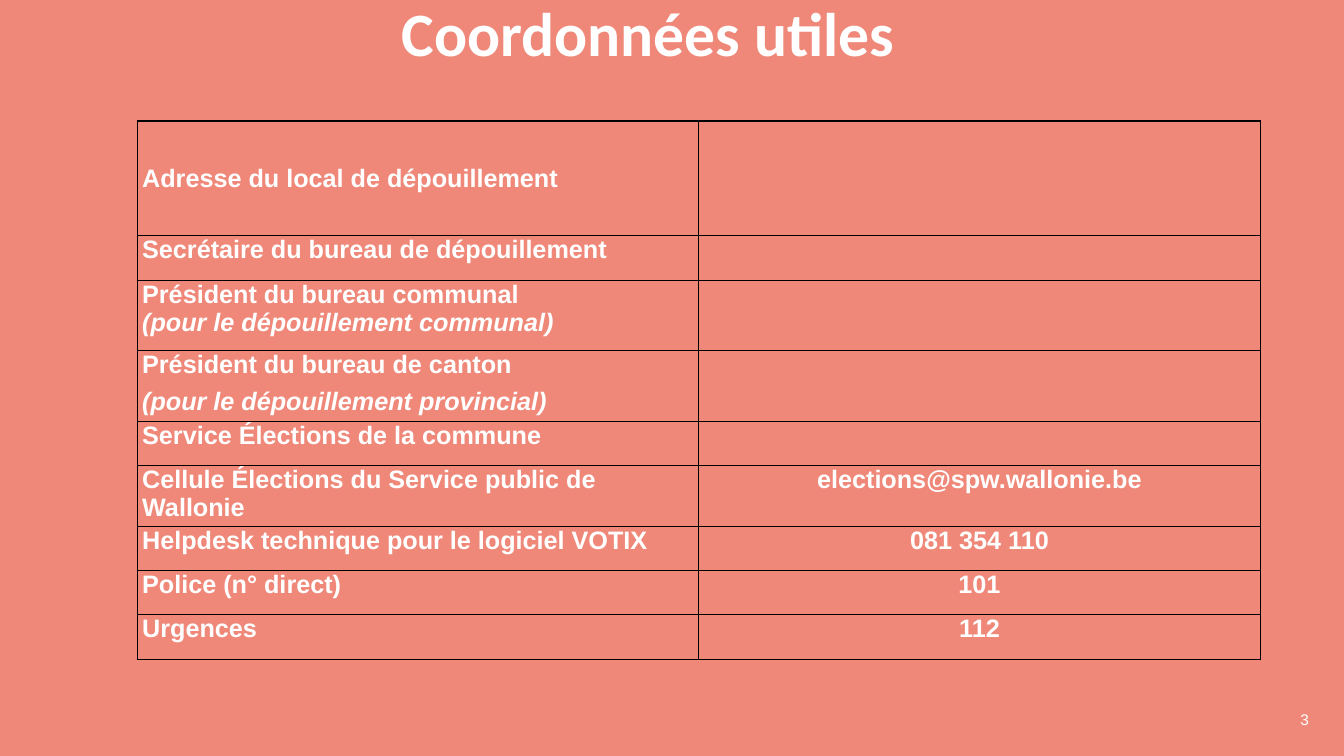
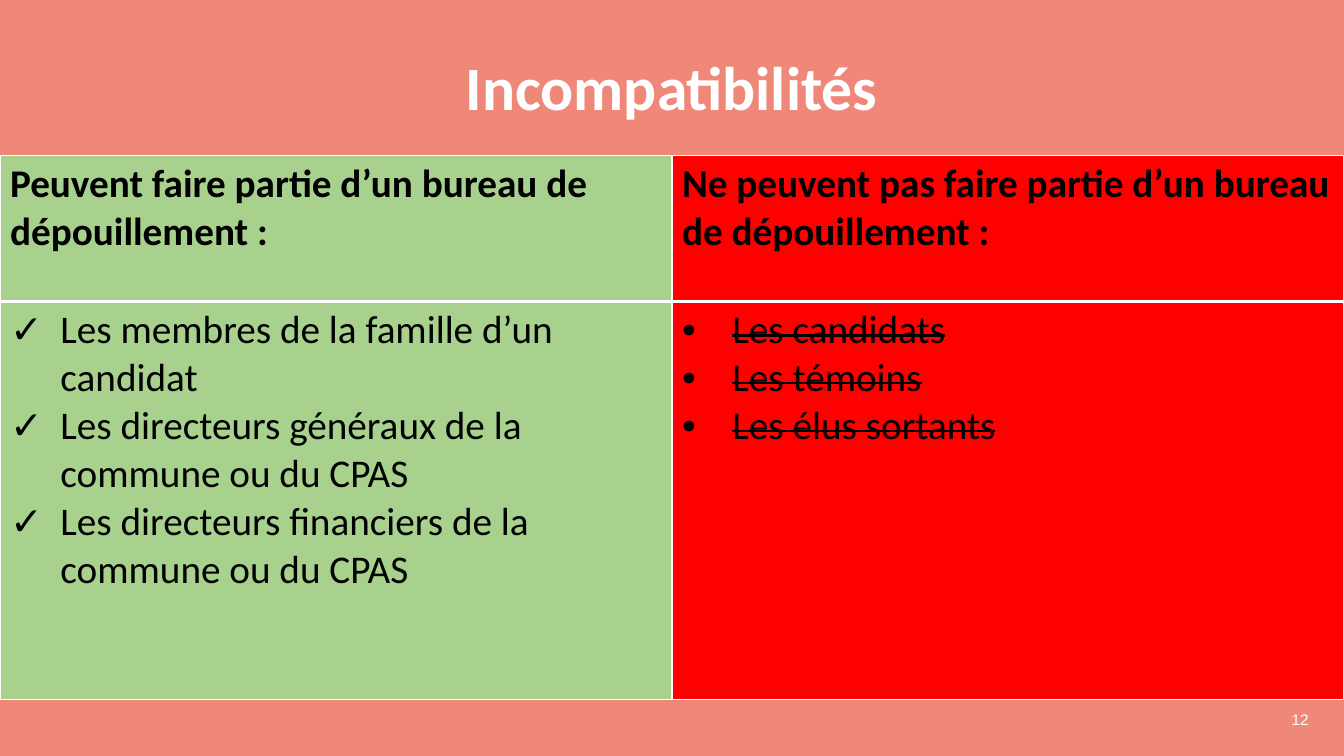
import pptx
import pptx.util
import pptx.dml.color
import pptx.enum.text
import pptx.oxml
import pptx.oxml.ns
from lxml import etree

Inches, Pt = pptx.util.Inches, pptx.util.Pt
ALIGN, ANCHOR = pptx.enum.text.PP_ALIGN, pptx.enum.text.MSO_ANCHOR
CORAL, WHITE, BLACK, GREEN, RED = "EF8879", "FFFFFF", "000000", "A9D18E", "FF0000"
WIDTH = 13.33


def style(paragraph, name, size, colour, bold=False, align=ALIGN.LEFT):
    paragraph.alignment = align
    font = paragraph.font
    font.name, font.size, font.bold = name, Pt(size), bold
    font.color.rgb = pptx.dml.color.RGBColor.from_string(colour)


def set_borders(cell, colour, top=1, bottom=1):
    properties = cell._tc.get_or_add_tcPr()
    for side, points in (("L", 1), ("R", 1), ("T", top), ("B", bottom)):
        line = etree.SubElement(properties, pptx.oxml.ns.qn("a:ln" + side), w=str(Pt(points)))
        fill = etree.SubElement(line, pptx.oxml.ns.qn("a:solidFill"))
        etree.SubElement(fill, pptx.oxml.ns.qn("a:srgbClr"), val=colour)


prs = pptx.Presentation()
prs.slide_width, prs.slide_height = Inches(WIDTH), Inches(7.5)

# Shared background
background = prs.slide_master.background.fill
background.solid()
background.fore_color.rgb = pptx.dml.color.RGBColor.from_string(CORAL)

# Shared parts: title, slide number and an unstyled two-column table
# title, title box, number, table left, top and width, row heights
outline = [
    ("Coordonnées utiles", (3.56, 0, 5.74, 0.73), "3", (1.36, 1.2, 11.14),
     [1.14, 0.44, 0.7, 0.7, 0.44, 0.57, 0.44, 0.44, 0.44]),
    ("Incompatibilités", (1.32, 0.12, 10.69, 1.15), "12", (0, 1.54, WIDTH),
     [1.45, 3.95]),
]
tables = []
for title, title_box, number, (left, top, width), heights in outline:
    slide = prs.slides.add_slide(prs.slide_layouts[6])
    for text, box, anchor, look in (
        (title, title_box, ANCHOR.BOTTOM, ("Calibri", 44, WHITE, True, ALIGN.CENTER)),
        (number, (10.08, 6.94, 3, 0.4), ANCHOR.MIDDLE, ("Arial", 11, WHITE, False, ALIGN.RIGHT)),
    ):
        frame = slide.shapes.add_textbox(*map(Inches, box)).text_frame
        frame.word_wrap = True
        frame.vertical_anchor = anchor
        frame.text = text
        style(frame.paragraphs[0], *look)
        if text == title:
            frame.paragraphs[0].line_spacing = Pt(44)

    table_box = map(Inches, (left, top, width, sum(heights)))
    table = slide.shapes.add_table(len(heights), 2, *table_box).table
    table.first_row = table.horz_banding = False
    for row, height in zip(table.rows, heights):
        row.height = Inches(height)
    for column in table.columns:
        column.width = Inches(width / 2)
    tables.append(table)

contact_table, eligibility_table = tables

# Useful contacts: label lines, value
contacts = [
    (["Adresse du local de dépouillement"], ""),
    (["Secrétaire du bureau de dépouillement"], ""),
    (["Président du bureau communal", "(pour le dépouillement communal)"], ""),
    (["Président du bureau de canton", "(pour le dépouillement provincial)"], ""),
    (["Service Élections de la commune"], ""),
    (["Cellule Élections du Service public de Wallonie"], "elections@spw.wallonie.be"),
    (["Helpdesk technique pour le logiciel VOTIX"], "081 354 110"),
    (["Police (n° direct)"], "101"),
    (["Urgences"], "112"),
]
for row, (label_lines, value) in zip(contact_table.rows, contacts):
    for cell, lines, align in zip(row.cells, (label_lines, [value]), (ALIGN.LEFT, ALIGN.CENTER)):
        set_borders(cell, BLACK)
        cell.fill.background()
        cell.margin_left = cell.margin_right = Inches(0.05)
        cell.margin_top = cell.margin_bottom = 0
        cell.text = "\n".join(lines)
        for paragraph in cell.text_frame.paragraphs:
            style(paragraph, "Arial", 18, WHITE, True, align)
            paragraph.font.italic = paragraph.text.startswith("(")
contact_table.cell(0, 0).vertical_anchor = ANCHOR.MIDDLE
contact_table.cell(3, 0).text_frame.paragraphs[1].space_before = Pt(6)

# Who may and may not sit: heading, fill, bullet, struck out, people
groups = [
    ("Peuvent faire partie d’un bureau de dépouillement :", GREEN, "✓", False,
     ["Les membres de la famille d’un candidat",
      "Les directeurs généraux de la commune ou du CPAS",
      "Les directeurs financiers de la commune ou du CPAS"]),
    ("Ne peuvent pas faire partie d’un bureau de dépouillement :", RED, "•", True,
     ["Les candidats", "Les témoins", "Les élus sortants"]),
]
for column, (heading, colour, bullet, struck, people) in enumerate(groups):
    heading_cell = eligibility_table.cell(0, column)
    people_cell = eligibility_table.cell(1, column)
    set_borders(heading_cell, WHITE, bottom=3)
    set_borders(people_cell, WHITE, top=3)
    for cell in (heading_cell, people_cell):
        cell.fill.solid()
        cell.fill.fore_color.rgb = pptx.dml.color.RGBColor.from_string(colour)

    heading_cell.text = heading
    style(heading_cell.text_frame.paragraphs[0], "Calibri", 28, BLACK, True)

    people_cell.text = "\n".join(people)
    for paragraph in people_cell.text_frame.paragraphs:
        properties = paragraph._p.get_or_add_pPr()
        properties.set("marL", str(Inches(0.5)))
        properties.set("indent", str(-Inches(0.5)))
        etree.SubElement(properties, pptx.oxml.ns.qn("a:buFont"), typeface="Arial")
        etree.SubElement(properties, pptx.oxml.ns.qn("a:buChar"), char=bullet)
        style(paragraph, "Calibri", 28, BLACK)
        if struck:
            paragraph.runs[0]._r.get_or_add_rPr().set("strike", "sngStrike")

prs.save("out.pptx")
